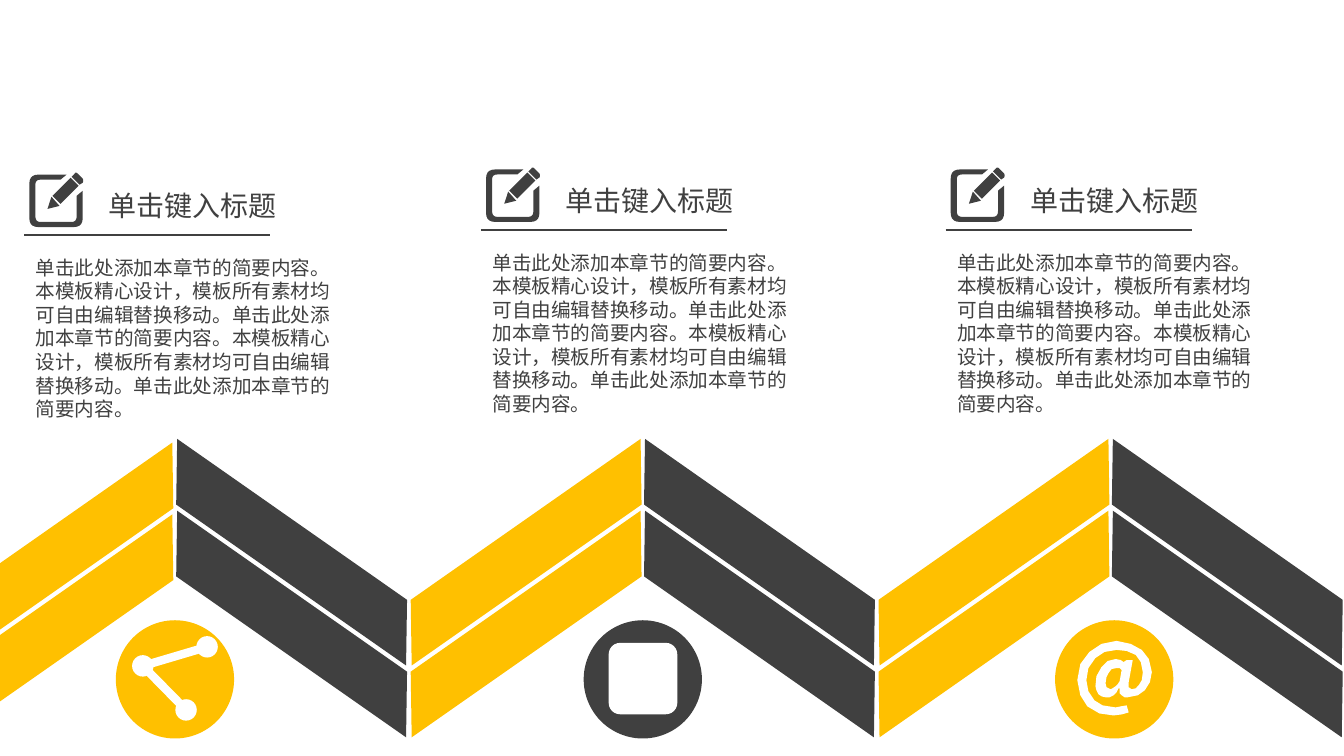
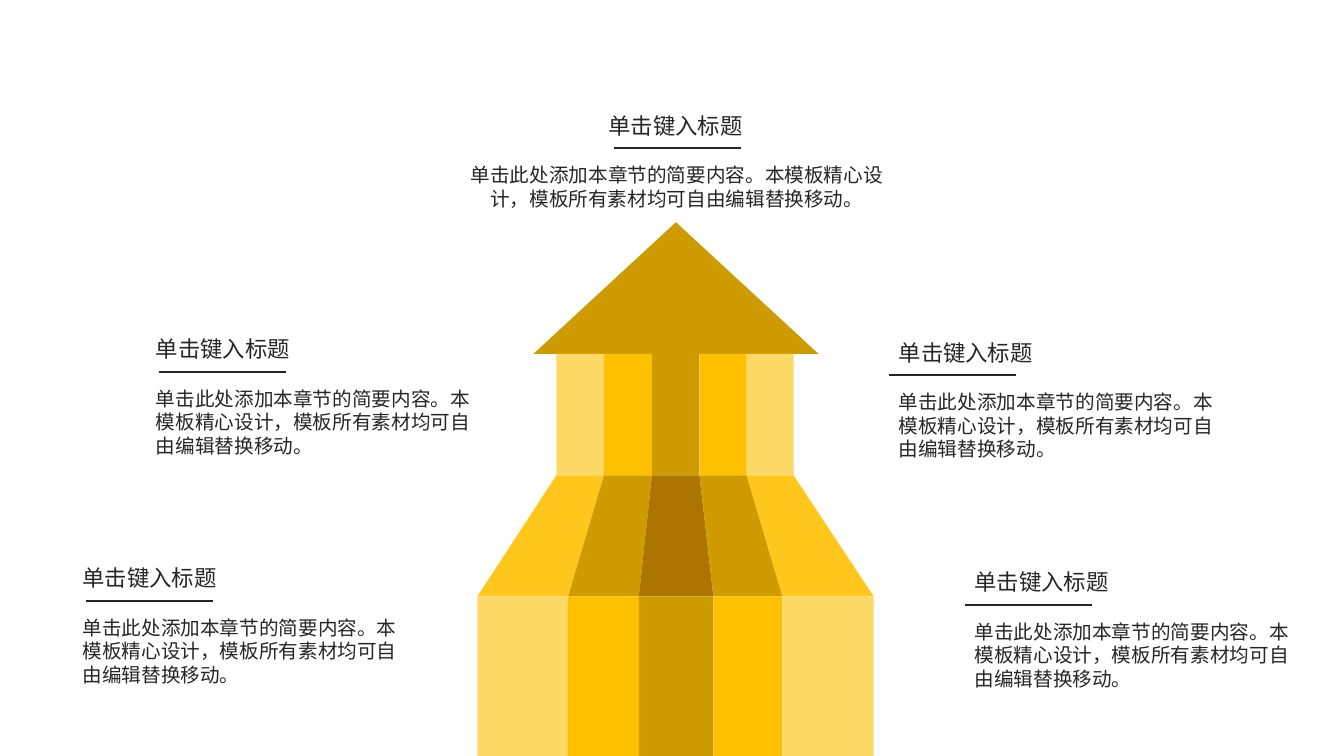
from pptx import Presentation
from pptx.dml.color import RGBColor
from pptx.enum import shapes, text
from pptx.oxml.ns import qn
from pptx.util import Cm, Pt

FONT = "Noto Sans CJK SC"
YELLOW, OCHRE, BROWN = "FFC000", "CE9B00", "AC7500"
PALE, AMBER = "FFD966", "FFC71B"
DARK, INK, WHITE = "404040", "262626", "FFFFFF"

HEADING = "单击键入标题"
SHORT_BODY = "单击此处添加本章节的简要内容。本模板精心设计，模板所有素材均可自由编辑替换移动。"
LONG_BODY = SHORT_BODY * 2 + "单击此处添加本章节的简要内容。"

# Icon contours: (x, y) is a corner, (cx, cy, x, y) a curve to x, y
ICON_UNIT = Cm(2.54) / 100
PENCIL = [
    [(53, 10), (50, 12), (42, 4), (45, 1), (46, -1, 48, 1), (53, 6), (54, 8, 53, 10)],
    [(31, 31), (23, 23), (41, 5), (49, 13)],
    [(30, 33), (18, 36), (22, 24)],
    [(11, 7), (6, 7, 6, 12), (6, 43), (6, 49, 11, 49), (42, 49), (47, 49, 47, 43),
     (47, 23), (53, 18), (53, 45), (53, 54, 44, 54), (9, 54), (0, 54, 0, 45),
     (0, 11), (0, 2, 9, 2), (37, 2), (31, 7)],
]
AT_SIGN = [
    [(49, 19), (55, 19), (51, 41), (51, 46), (54, 48), (58, 47), (61, 44), (64, 39),
     (65, 31), (63, 21), (58, 14), (49, 10), (39, 9), (27, 11), (18, 17), (11, 27),
     (9, 39), (11, 50), (17, 59), (25, 64), (38, 66), (43, 65), (49, 64), (51, 71),
     (44, 73), (36, 74), (22, 72), (10, 65), (3, 54), (0, 39), (3, 23), (12, 11),
     (24, 3), (39, 0), (53, 3), (64, 9), (71, 18), (74, 31), (72, 41), (67, 49),
     (60, 54), (50, 56), (47, 56), (44, 54), (42, 52), (42, 47), (41, 47), (39, 51),
     (36, 54), (32, 56), (28, 56), (24, 55), (21, 53), (19, 49), (18, 45), (19, 35),
     (24, 26), (30, 20), (38, 18), (43, 19), (46, 21)],
    [(44, 29), (42, 27), (39, 27), (34, 28), (31, 32), (29, 36), (28, 42), (29, 46),
     (33, 48), (35, 47), (38, 45), (40, 43), (42, 40)],
]


def rgb(color):
    return RGBColor.from_string(color)


def paint(sp, color):
    sp.shadow.inherit = False
    sp.fill.solid()
    sp.fill.fore_color.rgb = rgb(color)
    sp.line.fill.background()
    return sp


def add_shape(s, kind, x, y, w, h, color):
    preset = getattr(shapes.MSO_SHAPE, kind)
    return paint(s.shapes.add_shape(preset, Cm(x), Cm(y), Cm(w), Cm(h)), color)


def add_circle(s, cx, cy, r, color):
    return add_shape(s, "OVAL", cx - r, cy - r, 2 * r, 2 * r, color)


def flatten(contour, steps=5):
    """Turn the curves of a contour into short straight pieces."""
    points = []
    for item in contour:
        if len(item) == 2:
            points.append(item)
            continue
        (x0, y0), (cx, cy, x, y) = points[-1], item
        for t in (i / steps for i in range(1, steps + 1)):
            a, b, c = (1 - t) ** 2, 2 * t * (1 - t), t * t
            points.append((a * x0 + b * cx + c * x, a * y0 + b * cy + c * y))
    return points


def add_outline(s, contours, color, unit=Cm(1), x=0, y=0):
    """Draw closed contours, given in units from the point x, y."""
    # Local coordinates are rounded to integers, so work in EMU
    paths = [[(px * unit, py * unit) for px, py in flatten(c)] for c in contours]
    builder = s.shapes.build_freeform(*paths[0][0], scale=1.0)
    for i, points in enumerate(paths):
        if i:
            builder.move_to(*points[0])
        builder.add_line_segments(points[1:], close=True)
    return paint(builder.convert_to_shape(Cm(x), Cm(y)), color)


def add_line(s, x1, y1, x2, y2, color, width=1.25):
    line = s.shapes.add_connector(
        shapes.MSO_CONNECTOR.STRAIGHT, Cm(x1), Cm(y1), Cm(x2), Cm(y2))
    line.line.color.rgb = rgb(color)
    line.line.width = Pt(width)
    line._element.spPr.get_or_add_ln().addnext(
        line._element.spPr.makeelement(qn("a:effectLst"), {}))


def add_text(s, x, y, w, h, words, size, color, centred=False):
    tf = s.shapes.add_textbox(Cm(x), Cm(y), Cm(w), Cm(h)).text_frame
    tf.word_wrap = True
    p = tf.paragraphs[0]
    p.text = words
    p.line_spacing = Pt(size * 1.2)
    p.alignment = text.PP_ALIGN.CENTER if centred else text.PP_ALIGN.LEFT
    r = p.runs[0]
    r.font.name = FONT
    r.font.size = Pt(size)
    r.font.color.rgb = rgb(color)
    rPr = r._r.get_or_add_rPr()
    rPr.find(qn("a:latin")).addnext(rPr.makeelement(qn("a:ea"), {"typeface": FONT}))


def add_band(s, x, y, w, rising):
    """Two parallel stripes, climbing to the right in yellow or falling in grey."""
    for top in (y, y + 1.81):
        stripe = add_shape(s, "PARALLELOGRAM", x, top, w, 1.37, YELLOW if rising else DARK)
        stripe.adjustments[0] = 0.678
        stripe.rotation = 325 if rising else 35
        if not rising:
            stripe._element.spPr.xfrm.set("flipH", "1")


def add_icon_caption(s, x, y):
    """Icon and heading above a rule that starts at x, y; body text below."""
    add_outline(s, [c for c in PENCIL], DARK, ICON_UNIT, x + 0.13, y - 1.57)
    add_text(s, x + 1.88, y - 1.3, 5.5, 1.17, HEADING, 20, DARK)
    add_line(s, x, y, x + 6.2, y, DARK)
    add_text(s, x + 0.04, y + 0.4, 8.13, 5.2, LONG_BODY, 14, DARK)


def add_caption(s, x, y, heading_dx, body_dx, body_w=8.64, centred=False):
    """Heading above a rule that starts at x, y; body text below."""
    add_text(s, x + heading_dx, y - 1.04, 4.4, 1, HEADING, 16, INK)
    add_line(s, x, y, x + 3.2, y, INK)
    add_text(s, x + body_dx, y + 0.25, body_w, 2, SHORT_BODY, 14, INK, centred)


def add_share_icon(s):
    hub, *ends = (3.6, 16.78), (5.22, 16.3), (4.69, 17.89)
    for end in ends:
        add_line(s, *hub, *end, WHITE, 6)
    for node in (hub, *ends):
        add_circle(s, *node, 0.27, WHITE)


def build_zigzag(s):
    pitch = 11.79
    add_band(s, -1.04, 12.85, 6.35, True)
    for i in range(3):
        add_band(s, 3.35 + i * pitch, 13.23, 8, False)
    for i in range(2):
        add_band(s, 9.26 + i * pitch, 13.23, 8, True)

    for x, y in ((0.61, 5.92), (12.12, 5.79), (23.83, 5.79)):
        add_icon_caption(s, x, y)

    for cx, color in ((4.41, YELLOW), (16.2, DARK), (28.08, YELLOW)):
        add_circle(s, cx, 17.12, 1.49, color)
    add_share_icon(s)
    add_shape(s, "ROUNDED_RECTANGLE", 15.34, 16.2, 1.73, 1.8, WHITE)
    add_outline(s, AT_SIGN, WHITE, ICON_UNIT, 27.15, 16.15)


def build_tower(s):
    upper = [14.02, 15.22, 16.43, 17.63, 18.82, 20]
    lower = [12.03, 14.32, 16.1, 17.98, 19.72, 22.02]
    eaves, shoulder, skirt, ground = 8.92, 11.98, 15.03, 19.05
    walls = [PALE, YELLOW, OCHRE, YELLOW, PALE]
    slopes = [AMBER, OCHRE, BROWN, OCHRE, AMBER]

    add_shape(s, "ISOSCELES_TRIANGLE", 13.44, 5.6, 7.19, 3.32, OCHRE)
    for i, (wall, slope) in enumerate(zip(walls, slopes)):
        (a, b), (c, d) = upper[i:i + 2], lower[i:i + 2]
        add_shape(s, "RECTANGLE", a, eaves, b - a, shoulder - eaves, wall)
        add_outline(s, [[(a, shoulder), (b, shoulder), (d, skirt), (c, skirt)]], slope)
        add_shape(s, "RECTANGLE", c, skirt, d - c, ground - skirt, wall)

    add_caption(s, 15.47, 3.73, -0.38, -3.87, 10.92, centred=True)
    for x, y in ((4.01, 9.37), (2.16, 15.14)):
        add_caption(s, x, y, -0.33, -0.33)
    for x, y in ((22.4, 9.45), (24.31, 15.24)):
        add_caption(s, x, y, 0, 0)


def main():
    prs = Presentation()
    prs.slide_width, prs.slide_height = Cm(33.87), Cm(19.05)
    blank = prs.slide_layouts[6]
    for build in (build_zigzag, build_tower):
        build(prs.slides.add_slide(blank))
    prs.save("out.pptx")


if __name__ == "__main__":
    main()
